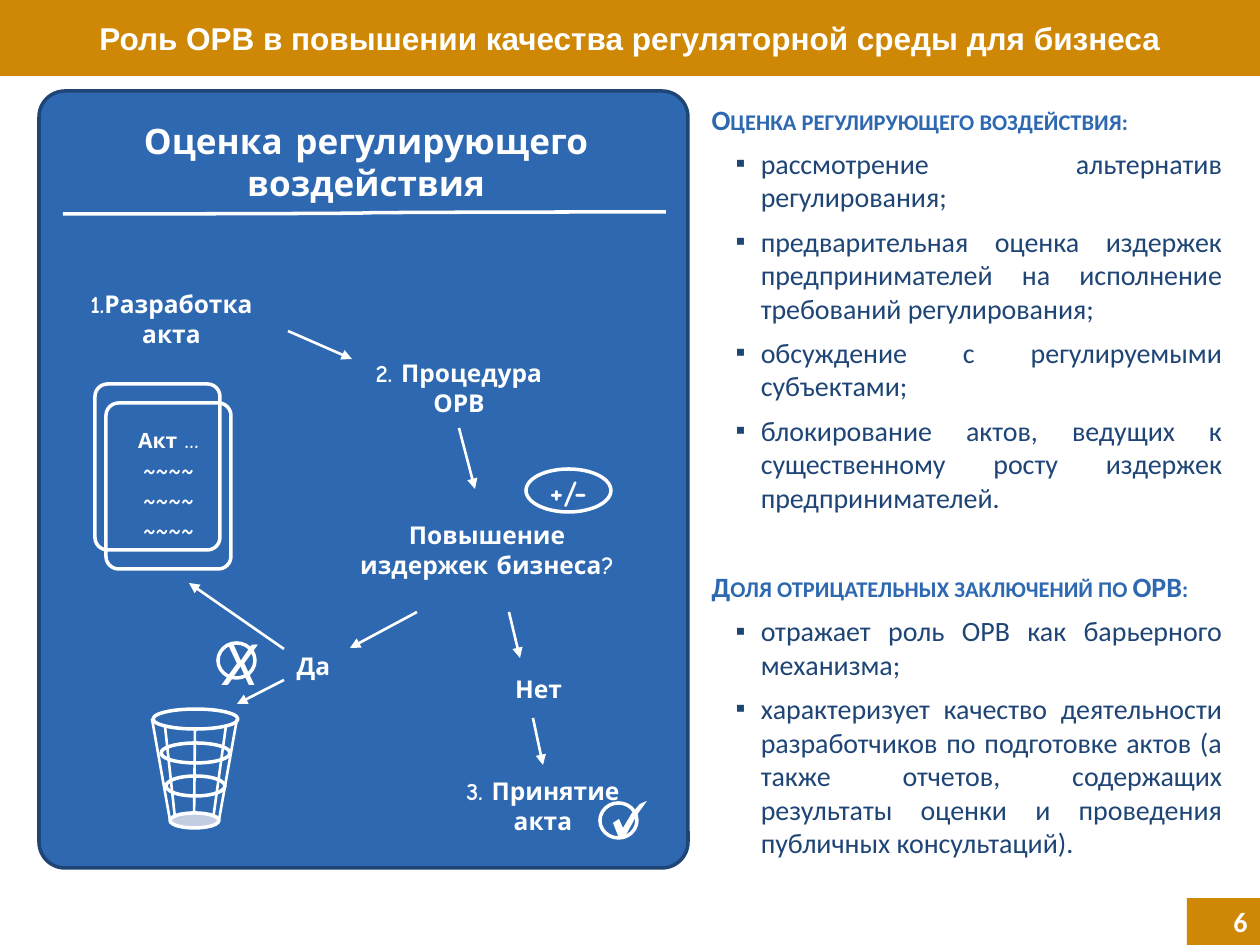
from dataclasses import dataclass

from lxml import etree
from pptx import Presentation
from pptx import util as u
from pptx.dml.color import RGBColor
from pptx.enum import shapes, text
from pptx.oxml.ns import qn

PX = 914400 / 126
FORM = shapes.MSO_SHAPE
MID, RIGHT, JUST = text.PP_ALIGN.CENTER, text.PP_ALIGN.RIGHT, text.PP_ALIGN.JUSTIFY


@dataclass(frozen=True)
class Theme:
    gold: str = "CF8806"
    blue: str = "2D68B1"
    navy: str = "1E4576"
    pale: str = "C2CDE1"
    white: str = "FFFFFF"
    sans: str = "Arial"
    body: str = "Calibri"
    hand: str = "Comic Neue"
    tiny: int = 12
    small: int = 14
    list: int = 16
    title: int = 18
    head: int = 20
    mark: int = 36
    thin: float = 1.5
    bold: int = 2


def emu(*vals):
    return [u.Emu(round(v * PX)) for v in vals]


class Deck:
    def __init__(self, theme):
        self.t = theme
        self.prs = Presentation()
        self.prs.slide_width, self.prs.slide_height = emu(1260, 945)
        self.slide = self.prs.slides.add_slide(self.prs.slide_layouts[1])

    def paint(self, shape, fill=None, line=None):
        if fill:
            shape.fill.solid()
            shape.fill.fore_color.rgb = RGBColor.from_string(fill)
        else:
            shape.fill.background()
        if line:
            shape.line.color.rgb = RGBColor.from_string(line)
            shape.line.width = u.Pt(self.t.bold)
        else:
            shape.line.fill.background()

    def place(self, shape, box):
        shape.left, shape.top, shape.width, shape.height = emu(*box)
        return shape

    def run(self, para, words, size, font, color, bold=True, italic=False):
        run = para.add_run()
        run.text = words
        run.font.size, run.font.name = u.Pt(size), font
        run.font.bold, run.font.italic = bold, italic
        run.font.color.rgb = RGBColor.from_string(color)
        return run

    def frame(self, shape, wrap=True, inset=None, anchor=text.MSO_ANCHOR.MIDDLE):
        tf = shape.text_frame
        tf.auto_size = text.MSO_AUTO_SIZE.NONE
        tf.word_wrap, tf.vertical_anchor = wrap, anchor
        if inset is not None:
            tf.margin_left = tf.margin_right = tf.margin_top = tf.margin_bottom = emu(inset)[0]
        return tf

    def words(self, tf, words, size, font, align=MID, **look):
        para = tf.paragraphs[0]
        para.alignment = align
        self.run(para, words, size, font, self.t.white, **look)

    def title(self, words, box):
        shape = self.place(self.slide.shapes.title, box)
        self.paint(shape, self.t.gold)
        self.words(self.frame(shape), words, self.t.title, self.t.sans)

    def lists(self, parts, box):
        shape = self.place(self.slide.placeholders[1], box)
        tf = self.frame(shape, anchor=text.MSO_ANCHOR.TOP)
        para = tf.paragraphs[0]
        for num, (head, items) in enumerate(parts):
            if num:
                para = tf.add_paragraph()
            self.item(para, head, 26 if num else 0)
            for words in items:
                self.item(tf.add_paragraph(), words, 0, "▪")

    def item(self, para, words, before, mark=None):
        para.alignment = JUST
        para.space_before, para.space_after = u.Pt(before), u.Pt(6)
        ppr = para._p.get_or_add_pPr()
        ppr.set("marL", str(u.Inches(0.39) if mark else 0))
        ppr.set("indent", str(-u.Inches(0.2) if mark else 0))
        if mark:
            etree.SubElement(ppr, qn("a:buChar")).set("char", mark)
        else:
            etree.SubElement(ppr, qn("a:buNone"))
        run = self.run(para, words, self.t.list, self.t.body,
                       self.t.navy if mark else self.t.blue, bold=not mark)
        if not mark:
            run._r.get_or_add_rPr().set("cap", "small")

    def shape(self, form, box, fill=None, line=None, adj=None):
        shape = self.slide.shapes.add_shape(form, *emu(*box))
        shape.shadow.inherit = False
        self.paint(shape, fill, line)
        if adj:
            shape.adjustments[0] = adj
        return shape

    def ring(self, box, fill=None):
        return self.shape(FORM.OVAL, box, fill, self.t.white)

    def label(self, words, box, size=None, wrap=True):
        shape = self.slide.shapes.add_textbox(*emu(*box))
        self.words(self.frame(shape, wrap), words, size or self.t.small, self.t.hand)
        return shape

    def note(self, lines, box):
        tf = self.frame(self.slide.shapes.add_textbox(*emu(*box)), inset=6)
        for num, words in enumerate(lines):
            para = tf.add_paragraph() if num else tf.paragraphs[0]
            para.alignment, para.line_spacing, para.space_after = MID, 0.9, u.Pt(4)
            self.run(para, words, self.t.tiny, self.t.hand, self.t.white)

    def line(self, ends, width=None, arrow=False, kind=shapes.MSO_CONNECTOR.STRAIGHT):
        link = self.slide.shapes.add_connector(kind, *emu(*ends))
        link.line.color.rgb = RGBColor.from_string(self.t.white)
        link.line.width = u.Pt(width or self.t.thin)
        props = link._element.spPr
        if arrow:
            etree.SubElement(props.find(qn("a:ln")), qn("a:tailEnd")).set("type", "triangle")
        etree.SubElement(props, qn("a:effectLst"))
        return link

    def tick(self, pts):
        pen = self.slide.shapes.build_freeform(*pts[0], scale=PX)
        pen.add_line_segments(pts[1:])
        shape = pen.convert_to_shape()
        shape.shadow.inherit = False
        self.paint(shape, self.t.white)


def main():
    t = Theme()
    d = Deck(t)

    # Title and list
    d.title("Роль ОРВ в повышении качества регуляторной среды для бизнеса", (0, 0, 1260, 76))
    d.lists([
        ("Оценка регулирующего воздействия:", [
            "рассмотрение альтернатив регулирования;",
            "предварительная оценка издержек предпринимателей на исполнение требований регулирования;",
            "обсуждение с регулируемыми субъектами;",
            "блокирование актов, ведущих к существенному росту издержек предпринимателей."]),
        ("Доля отрицательных заключений по ОРВ:", [
            "отражает роль ОРВ как барьерного механизма;",
            "характеризует качество деятельности разработчиков по подготовке актов (а также "
            "отчетов, содержащих результаты оценки и проведения публичных консультаций)."]),
    ], (699, 96, 536, 776))

    # Panel with its heading
    d.shape(FORM.ROUNDED_RECTANGLE, (39, 91, 649, 777), t.blue, t.navy, 0.04)
    d.label("Оценка регулирующего воздействия", (42, 98, 648, 127), t.head)
    d.line((63, 214, 666, 212), t.bold, kind=shapes.MSO_CONNECTOR.CURVE)

    # Draft act
    for x, y in ((95, 384), (106, 403)):
        d.shape(FORM.ROUNDED_RECTANGLE, (x, y, 125, 166), line=t.white, adj=0.1)
    d.note(["Акт …"] + ["~~~~"] * 3, (106, 403, 125, 166))

    # Steps
    d.label("1.Разработка акта", (48, 278, 247, 81))
    check = d.label("2. Процедура ОРВ", (338, 347, 242, 81))
    d.label("Повышение издержек бизнеса?", (344, 509, 286, 81))
    d.label("Да", (229, 644, 169, 44))
    d.label("Нет", (498, 667, 81, 43), wrap=False)
    adopt = d.label("3. Принятие акта", (422, 765, 242, 81))

    # Arrows
    for ends in ((288, 331, 352, 359), (417, 612, 350, 648), (509, 612, 520, 658),
                 (284, 680, 237, 704), (284, 649, 189, 583)):
        d.line(ends, arrow=True)
    d.line((459, 426, 475, 489), arrow=True).begin_connect(check, 2)
    d.line((533, 718, 544, 765), arrow=True).end_connect(adopt, 0)

    # Bin
    for ends in ((152, 719, 170, 820), (237, 719, 219, 820), (226, 726, 212, 827),
                 (195, 730, 194, 828), (165, 726, 176, 827)):
        d.line(ends)
    for y, wide in ((709, 85), (743, 69), (776, 59)):
        d.ring((195 - wide // 2, y, wide, 20))
    d.ring((170, 813, 49, 15), t.pale)

    # Marks
    sign = d.ring((526, 469, 85, 43))
    d.words(d.frame(sign, inset=0), "+/-", t.title, t.hand)
    cross = d.ring((218, 643, 37, 35))
    d.words(d.frame(cross, inset=0), "Х", t.mark, t.body, bold=False, italic=True)
    d.ring((600, 803, 37, 35))
    d.tick([(613, 823), (619, 819), (623, 828), (632, 813), (640, 804),
            (647, 801), (637, 815), (626, 835), (619, 838)])

    # Page number
    page = d.shape(FORM.RECTANGLE, (1187, 898, 73, 47), t.gold)
    d.words(d.frame(page), "6", t.list, t.body, RIGHT)

    d.prs.save("out.pptx")


if __name__ == "__main__":
    main()
